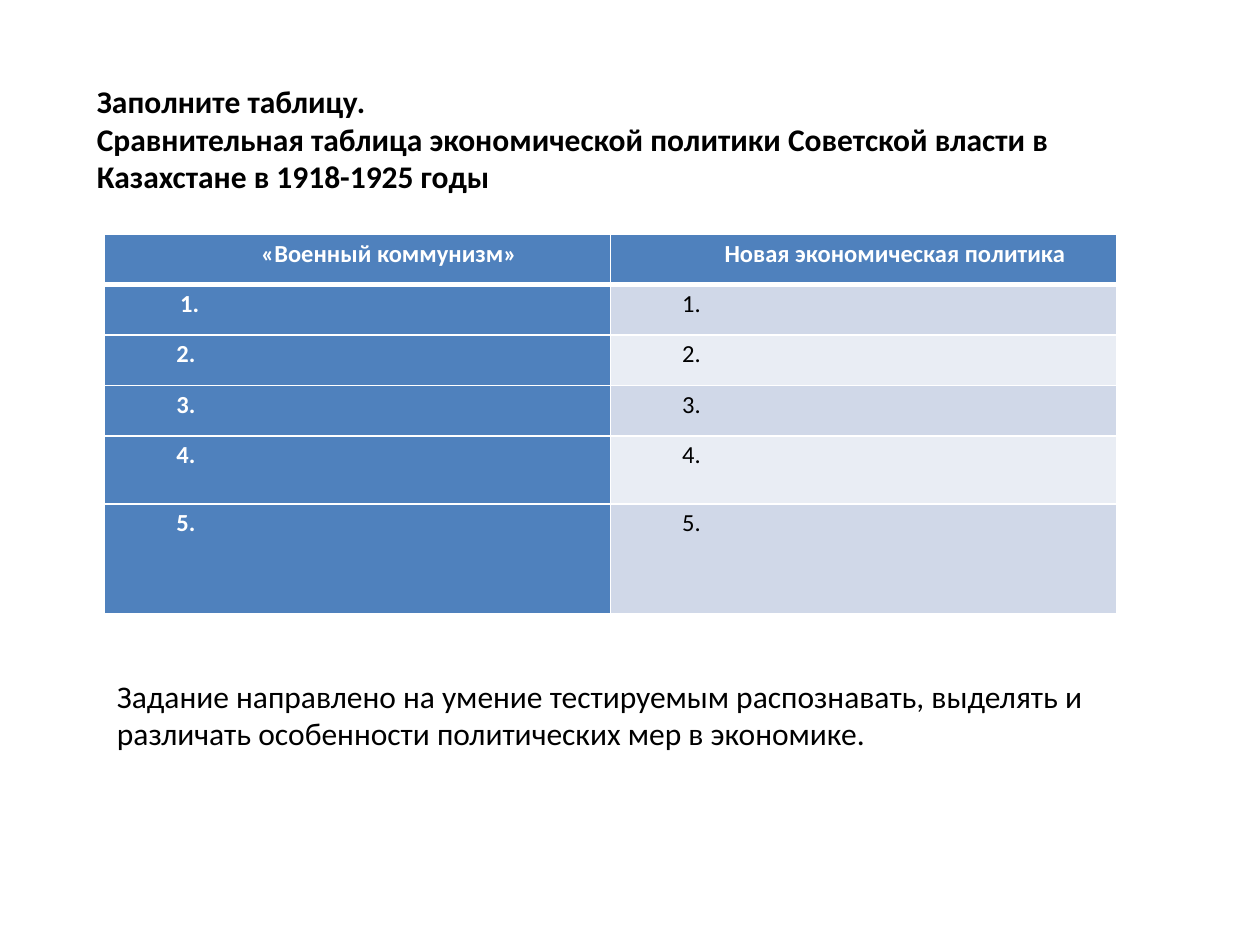
from lxml.etree import SubElement
from pptx import Presentation
from pptx.dml.color import RGBColor
from pptx.enum.text import MSO_AUTO_SIZE as AutoSize, PP_ALIGN as Align
from pptx.oxml.ns import qn
from pptx.util import Inches, Pt

BLACK, WHITE, BLUE = "000000", "FFFFFF", "4F81BD"
BANDS = ("D0D8E8", "E9EDF4")
HEADINGS = ("«Военный коммунизм»", "Новая экономическая политика")
ROW_HEIGHTS = (0.4, 0.4, 0.4, 0.4, 0.54, 0.87)
TASK = (
    "Заполните таблицу.",
    "Сравнительная таблица экономической политики Советской власти в "
    "Казахстане в 1918-1925 годы",
)
PURPOSE = (
    "Задание направлено на умение тестируемым распознавать, выделять и "
    "различать особенности политических мер в экономике.",
)


def color(hex_value):
    return RGBColor.from_string(hex_value)


def style_runs(paragraph, size, hex_value, bold):
    for run in paragraph.runs:
        run.font.name = "Calibri"
        run.font.size = Pt(size)
        run.font.bold = bold
        run.font.color.rgb = color(hex_value)


def add_text(slide, box, lines, bold=False):
    frame = slide.shapes.add_textbox(*map(Inches, box)).text_frame
    frame.word_wrap = True
    frame.auto_size = AutoSize.SHAPE_TO_FIT_TEXT
    frame.text = "\n".join(lines)
    for paragraph in frame.paragraphs:
        style_runs(paragraph, 18, BLACK, bold)


def set_borders(cell, top, bottom):
    """White borders, with top and bottom widths in points."""
    properties = cell._tc.get_or_add_tcPr()
    widths = {"a:lnL": 1, "a:lnR": 1, "a:lnT": top, "a:lnB": bottom}
    for position, (side, width) in enumerate(widths.items()):
        line = properties.makeelement(qn(side), {"w": str(Pt(width))})
        fill = SubElement(line, qn("a:solidFill"))
        SubElement(fill, qn("a:srgbClr"), val=WHITE)
        properties.insert(position, line)


def fill_cell(cell, text, fill, ink, bold, align, indent):
    cell.margin_left = cell.margin_right = Inches(0.07)
    cell.margin_top = cell.margin_bottom = 0
    cell.fill.solid()
    cell.fill.fore_color.rgb = color(fill)
    paragraph = cell.text_frame.paragraphs[0]
    paragraph.text = text
    paragraph.alignment = align
    paragraph.line_spacing = 1.15
    paragraph._p.get_or_add_pPr().set("marL", str(Inches(indent)))
    style_runs(paragraph, 14, ink, bold)


def add_comparison(slide, box):
    frame = slide.shapes.add_table(
        len(ROW_HEIGHTS), len(HEADINGS), *map(Inches, box))
    table = frame.table
    for row, height in zip(table.rows, ROW_HEIGHTS):
        row.height = Inches(height)

    for number in range(len(ROW_HEIGHTS)):
        is_header = number == 0
        for column, heading in enumerate(HEADINGS):
            cell = table.cell(number, column)
            accented = is_header or column == 0
            fill_cell(
                cell,
                text=heading if is_header else f"{number}. ",
                fill=BLUE if accented else BANDS[(number - 1) % 2],
                ink=WHITE if accented else BLACK,
                bold=accented,
                align=Align.CENTER if is_header else Align.JUSTIFY,
                # The first item sits slightly further in
                indent=0.53 if (number, column) == (1, 0) else 0.5,
            )
            set_borders(cell, top=3 if number == 1 else 1,
                        bottom=3 if is_header else 1)


def main():
    deck = Presentation()
    deck.slide_width, deck.slide_height = Inches(10), Inches(7.5)
    slide = deck.slides.add_slide(deck.slide_layouts[6])

    # Table to fill in, its purpose below and the task above
    add_comparison(slide, (0.83, 1.86, 8.03, 2.99))
    add_text(slide, (0.83, 5.32, 8.03, 1.01), PURPOSE)
    add_text(slide, (0.67, 0.6, 8.19, 1.01), TASK, bold=True)

    deck.save("out.pptx")


if __name__ == "__main__":
    main()
